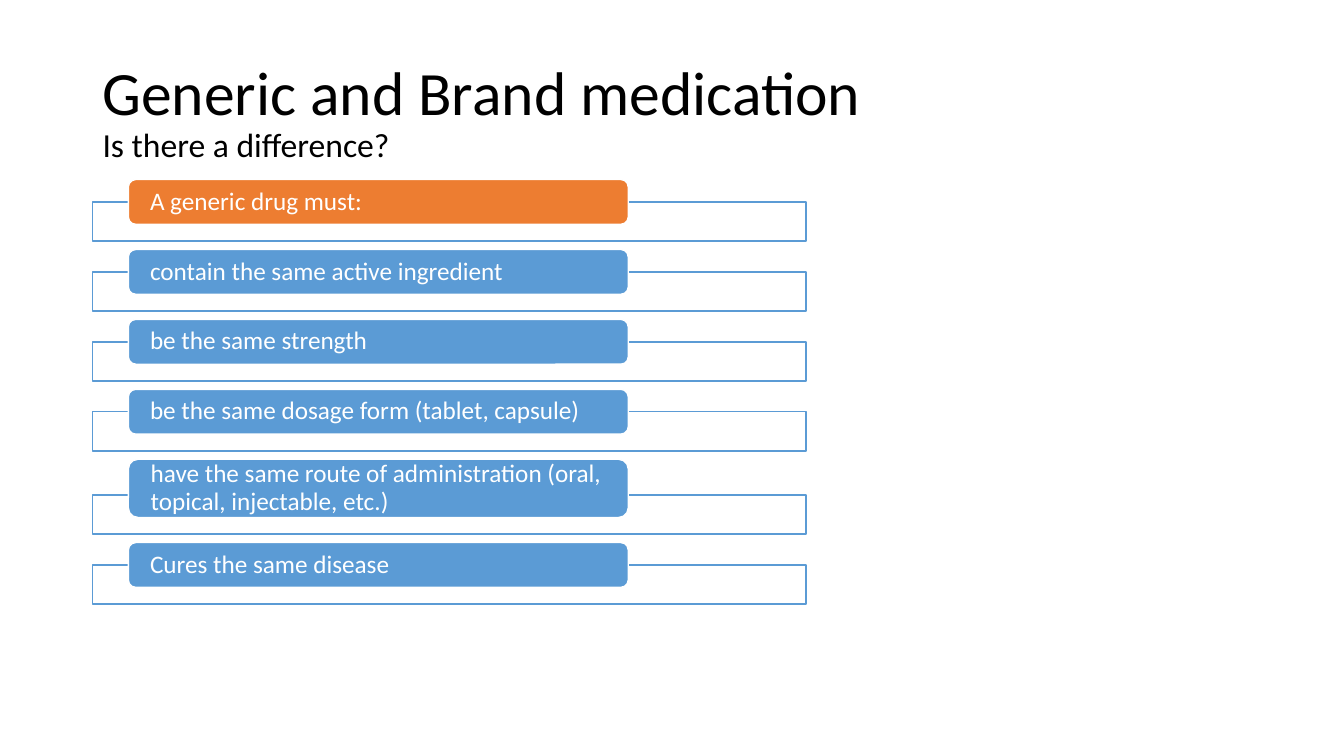
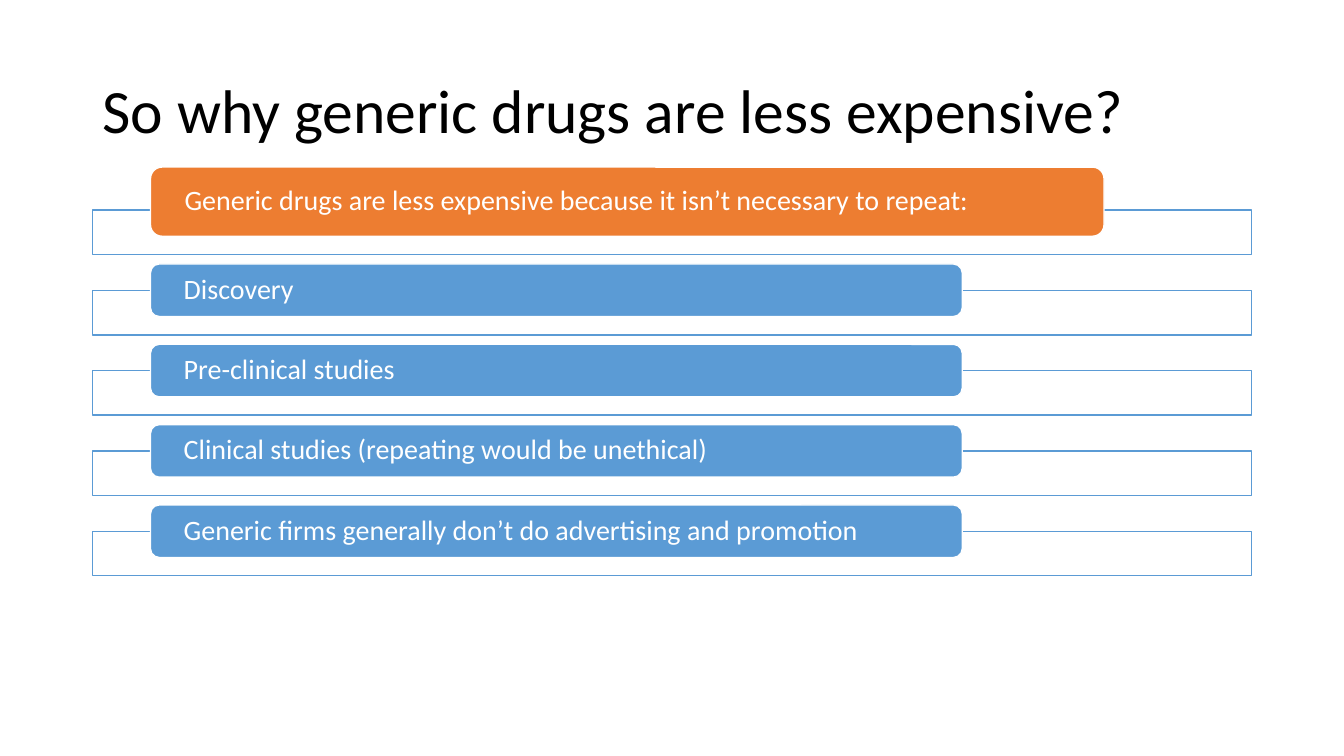
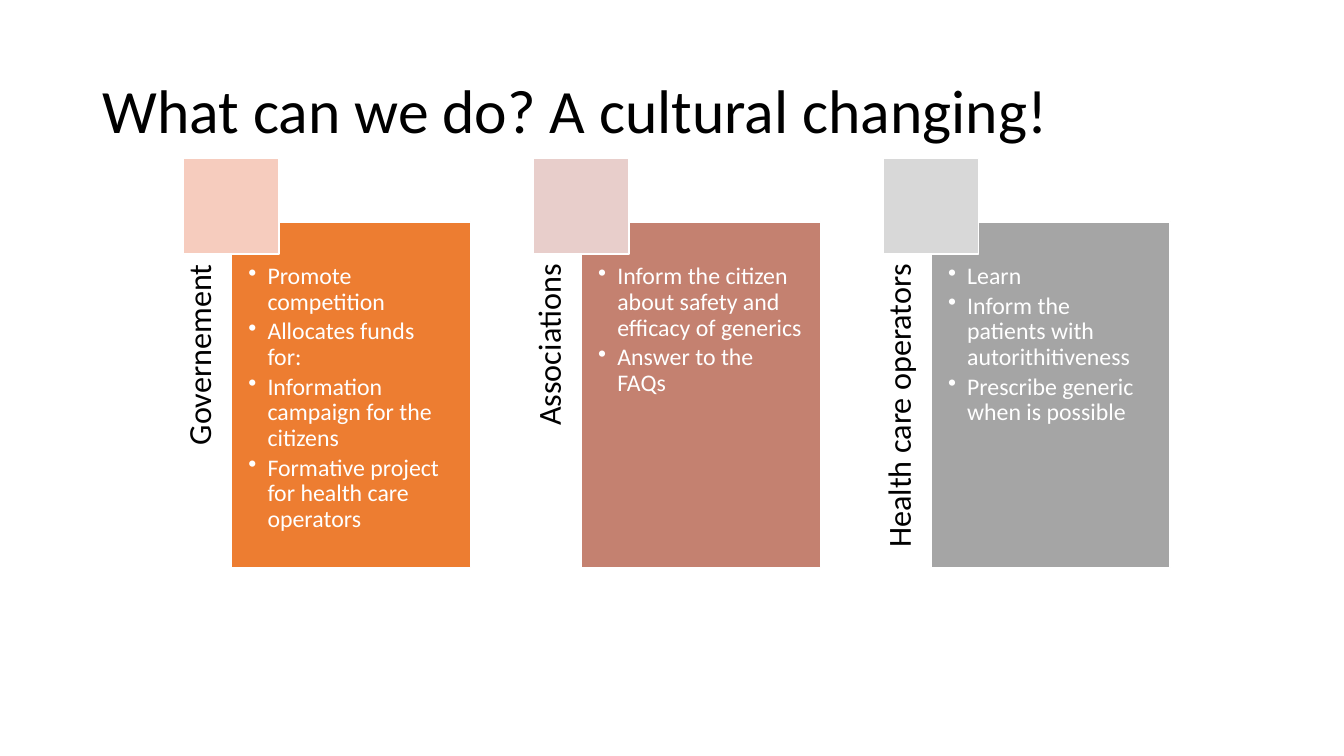
from lxml import etree
from pptx import Presentation
from pptx.dml.color import RGBColor
from pptx.enum.shapes import MSO_SHAPE
from pptx.enum.text import MSO_ANCHOR, MSO_AUTO_SIZE, PP_ALIGN
from pptx.oxml.ns import qn
from pptx.util import Inches, Pt

# Colours
BLACK = RGBColor(0x00, 0x00, 0x00)
WHITE = RGBColor(0xFF, 0xFF, 0xFF)
BLUE = RGBColor(0x5B, 0x9B, 0xD5)
ORANGE = RGBColor(0xED, 0x7D, 0x31)
ROSE = RGBColor(0xC4, 0x81, 0x70)
GREY = RGBColor(0xA5, 0xA5, 0xA5)
PALE_ORANGE = RGBColor(0xF6, 0xCC, 0xBE)
PALE_ROSE = RGBColor(0xE8, 0xCE, 0xCB)
PALE_GREY = RGBColor(0xD8, 0xD8, 0xD8)

# Enum members
RECT, ROUND_RECT = MSO_SHAPE.RECTANGLE, MSO_SHAPE.ROUNDED_RECTANGLE
TOP, MIDDLE = MSO_ANCHOR.TOP, MSO_ANCHOR.MIDDLE
LEFT, RIGHT = PP_ALIGN.LEFT, PP_ALIGN.RIGHT
NO_FIT = MSO_AUTO_SIZE.NONE

FONT = "Calibri"
TITLE_ONLY = 5
MARGIN = 6.88  # left edge of title and tracks, percent of the width


class Deck:
    """Holds the style and the current slide; lengths are percent of its size."""

    def __init__(self):
        self.prs = Presentation()
        self.prs.slide_width, self.prs.slide_height = Inches(13.33), Inches(7.5)
        self.slide = None

    def x(self, share):
        return round(self.prs.slide_width * share / 100)

    def y(self, share):
        return round(self.prs.slide_height * share / 100)

    def box(self, left, top, width, height):
        return self.x(left), self.y(top), self.x(width), self.y(height)

    def frame(self, shape, anchor, insets=(0, 0, 0, 0)):
        left, top, right, bottom = insets
        layout = {
            "auto_size": NO_FIT, "word_wrap": True, "vertical_anchor": anchor,
            "margin_left": left, "margin_top": top,
            "margin_right": right, "margin_bottom": bottom,
        }
        for name, value in layout.items():
            setattr(shape.text_frame, name, value)
        return shape.text_frame

    def paragraph(self, paragraph, runs, color, align=LEFT, after=0):
        """Write (text, size) runs, one to a line."""
        style = {"alignment": align, "line_spacing": 0.9,
                 "space_before": Pt(0), "space_after": Pt(after)}
        for name, value in style.items():
            setattr(paragraph, name, value)
        for number, (text, size) in enumerate(runs):
            if number:
                paragraph.add_line_break()
            run = paragraph.add_run()
            run.text = text
            for name, value in {"name": FONT, "size": Pt(size)}.items():
                setattr(run.font, name, value)
            run.font.color.rgb = color

    def new_slide(self, title, subtitle=None):
        self.slide = self.prs.slides.add_slide(self.prs.slide_layouts[TITLE_ONLY])
        heading = self.slide.shapes.title
        place = dict(zip(("left", "top", "width", "height"),
                         self.box(MARGIN, 5.33, 86.25, 19.33)))
        for name, value in place.items():
            setattr(heading, name, value)
        pad = (Inches(0.1), Inches(0.05)) * 2
        runs = [(title, 44)] + ([(subtitle, 24)] if subtitle else [])
        self.paragraph(self.frame(heading, MIDDLE, pad).paragraphs[0], runs, BLACK)

    def block(self, kind, place, fill, line=WHITE, opacity=None):
        shape = self.slide.shapes.add_shape(kind, *self.box(*place))
        shape.shadow.inherit = False
        shape.fill.solid()
        shape.fill.fore_color.rgb = fill
        shape.line.color.rgb = line
        shape.line.width = Pt(1)
        if opacity:
            tint = shape.fill._xPr.find(qn("a:solidFill"))[0]
            etree.SubElement(tint, qn("a:alpha"), val=str(opacity * 1000))
        return shape

    def bar_list(self, bars, top, bottom, left, bar_height, track_width,
                 track_height, inset, size):
        """Stack (text, width, height) bars evenly, each over an outlined track."""
        gap = (bottom - top - sum(bar[2] for bar in bars)) / (len(bars) - 1)
        for number, (text, width, height) in enumerate(bars):
            track_top = top + height - bar_height / 2
            self.block(RECT, (MARGIN, track_top, track_width, track_height),
                       WHITE, BLUE, opacity=90)
            bar = self.block(ROUND_RECT, (left, top, width, height),
                             BLUE if number else ORANGE)
            pad = (self.x(inset), 0, self.x(inset), 0)
            self.paragraph(self.frame(bar, MIDDLE, pad).paragraphs[0],
                           [(text, size)], WHITE)
            top += height + gap

    def side_label(self, text, left, top, width, height):
        """Label read from bottom to top inside the given upright strip."""
        left, top, width, height = self.box(left, top, width, height)
        label = self.slide.shapes.add_textbox(
            left + (width - height) // 2, top + (height - width) // 2, height, width)
        label.rotation = 270
        frame = self.frame(label, TOP, (0, 0, Inches(0.42), 0))
        self.paragraph(frame.paragraphs[0], [(text, 23)], BLACK, RIGHT)

    def bullets(self, shape, items):
        pad = (Inches(0.17), Inches(0.42), Inches(0.17), Inches(0.17))
        frame = self.frame(shape, TOP, pad)
        indent = Inches(0.19)
        for number, item in enumerate(items):
            paragraph = frame.add_paragraph() if number else frame.paragraphs[0]
            properties = paragraph._p.get_or_add_pPr()
            properties.set("marL", str(indent))
            properties.set("indent", str(-indent))
            etree.SubElement(properties, qn("a:buChar"), char="•")
            self.paragraph(paragraph, [(item, 17)], WHITE, after=2.7)

    def panel(self, label, items, left, fill, corner_fill):
        """Bulleted panel with a side label and a square on its corner."""
        top, width, height = 29.35, 17.8, 45.75
        corner_width, corner_height = 7.13, 12.67
        corner_left = left - corner_width / 2
        self.side_label(label, corner_left, top, corner_width / 2, height)
        self.bullets(self.block(RECT, (left, top, width, height), fill), items)
        self.block(RECT, (corner_left, 20.95, corner_width, corner_height), corner_fill)


def main():
    deck = Deck()

    # Requirements for a generic drug
    deck.new_slide("Generic and Brand medication", "Is there a difference?")
    bar_width, bar_height = 37.2, 5.93
    requirements = [
        ("A generic drug must:", bar_width, bar_height),
        ("contain the same active ingredient", bar_width, bar_height),
        ("be the same strength", bar_width, bar_height),
        ("be the same dosage form (tablet, capsule)", bar_width, bar_height),
        ("have the same route of administration (oral, topical, injectable, etc.)",
         bar_width, 7.7),
        ("Cures the same disease", bar_width, bar_height),
    ]
    deck.bar_list(requirements, top=23.75, bottom=77.7, left=9.55,
                  bar_height=bar_height, track_width=53.1, track_height=5.17,
                  inset=1.45, size=18)

    # Reasons for the lower price
    deck.new_slide("So why generic drugs are less expensive?")
    bar_width, bar_height = 60.4, 6.95
    reasons = [
        ("Generic drugs are less expensive because it isn’t necessary to repeat:",
         70.95, 9.15),
        ("Discovery", bar_width, bar_height),
        ("Pre-clinical studies", bar_width, bar_height),
        ("Clinical studies (repeating would be unethical)", bar_width, bar_height),
        ("Generic firms generally don’t do advertising and promotion",
         bar_width, bar_height),
    ]
    deck.bar_list(reasons, top=22.1, bottom=73.75, left=11.2,
                  bar_height=bar_height, track_width=86.25, track_height=5.9,
                  inset=2.28, size=20)

    # Who can act
    deck.new_slide("What can we do? A cultural changing!")
    actors = [
        ("Governement",
         ["Promote competition", "Allocates funds for:",
          "Information campaign for the citizens",
          "Formative project for health care operators"],
         ORANGE, PALE_ORANGE),
        ("Associations",
         ["Inform the citizen about safety and efficacy of generics",
          "Answer to the FAQs"],
         ROSE, PALE_ROSE),
        ("Health care operators",
         ["Learn", "Inform the patients with autorithitiveness",
          "Prescribe generic when is possible"],
         GREY, PALE_GREY),
    ]
    for column, (label, items, fill, corner_fill) in enumerate(actors):
        deck.panel(label, items, 17.2 + 26.03 * column, fill, corner_fill)

    deck.prs.save("out.pptx")


if __name__ == "__main__":
    main()
